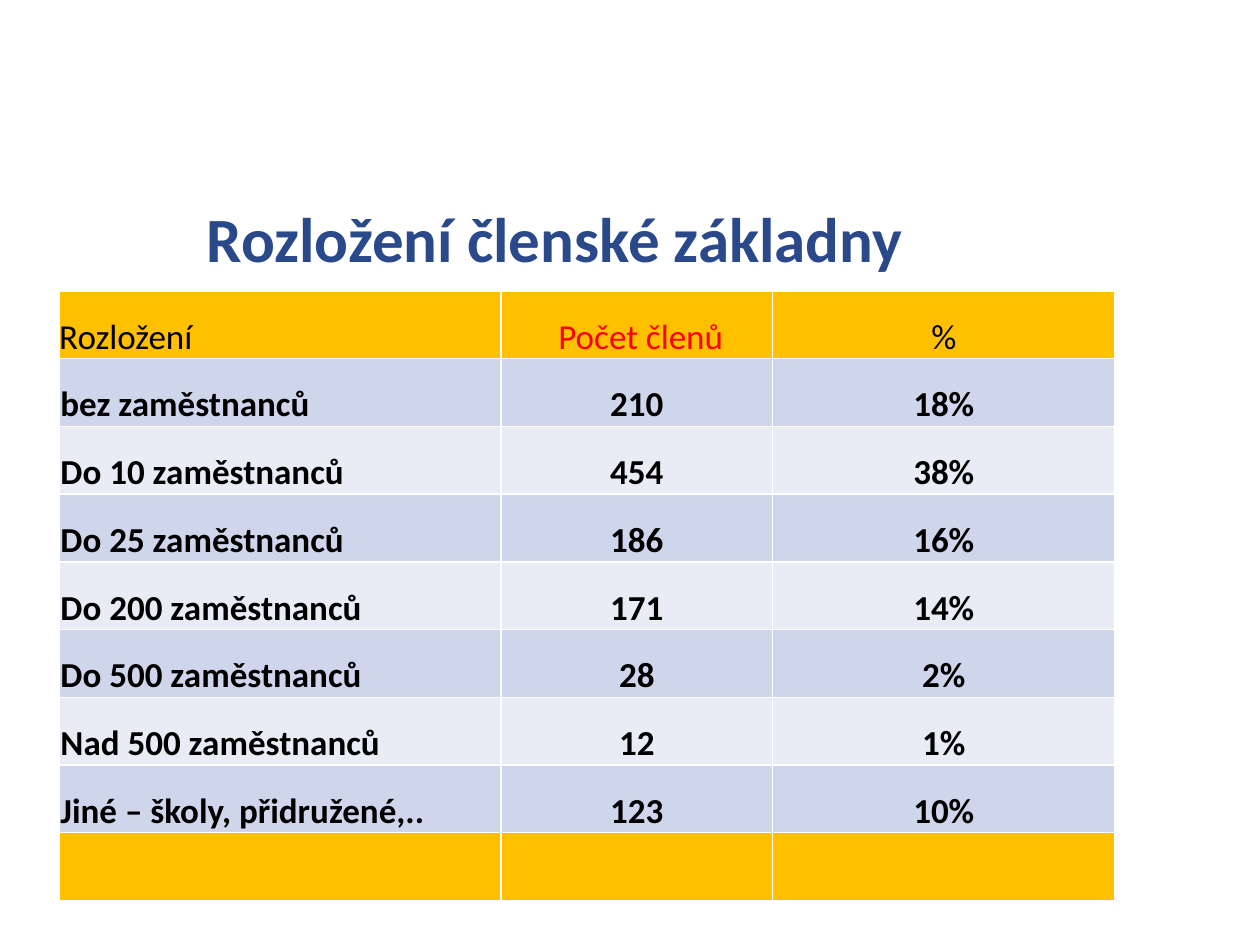
import pptx
import pptx.util
import pptx.dml.color
import pptx.enum.text
import pptx.oxml
import pptx.oxml.ns
from dataclasses import dataclass

Inches = pptx.util.Inches
Align = pptx.enum.text.PP_ALIGN
Anchor = pptx.enum.text.MSO_ANCHOR


@dataclass(frozen=True)
class Theme:
    font: str = "Calibri"
    title: str = "2A498B"
    text: str = "000000"
    hot: str = "FF0000"
    gold: str = "FFC000"
    bands: tuple = ("CFD5EA", "E9EBF5")
    rule: str = "FFFFFF"
    large: int = 36
    body: int = 20
    line: int = 1


THEME = Theme()
COLS = (3.51, 2.16, 2.72)
ROWS = (
    ("Rozložení", " Počet členů", "%"),
    ("bez zaměstnanců", "210", "18%"),
    ("Do 10 zaměstnanců", "454", "38%"),
    ("Do 25 zaměstnanců", "186", "16%"),
    ("Do 200 zaměstnanců", "171", "14%"),
    ("Do 500 zaměstnanců", "28", "2%"),
    ("Nad 500 zaměstnanců", "12", "1%"),
    ("Jiné – školy, přidružené,..", "123", "10%"),
    ("", "", ""),
)


def write(frame, text, size, tint, bold, align):
    frame.text = text
    para = frame.paragraphs[0]
    para.alignment = align
    for run in para.runs:
        run.font.name = THEME.font
        run.font.size = pptx.util.Pt(size)
        run.font.bold = bold
        run.font.color.rgb = pptx.dml.color.RGBColor.from_string(tint)


def edge(cell):
    props = cell._tc.get_or_add_tcPr()
    width = pptx.util.Pt(THEME.line)
    for side in "LRTB":
        props.append(pptx.oxml.parse_xml(
            f'<a:ln{side} {pptx.oxml.ns.nsdecls("a")} w="{width}"><a:solidFill>'
            f'<a:srgbClr val="{THEME.rule}"/></a:solidFill></a:ln{side}>'))


def style(cell, fill, inset):
    edge(cell)
    cell.fill.solid()
    cell.fill.fore_color.rgb = pptx.dml.color.RGBColor.from_string(fill)
    cell.vertical_anchor = Anchor.BOTTOM
    cell.margin_left = cell.margin_right = cell.margin_top = Inches(inset)
    cell.margin_bottom = 0


def head(slide, box):
    title = slide.shapes.title
    title.left, title.top, title.width, title.height = map(Inches, box)
    frame = title.text_frame
    write(frame, "Rozložení členské základny ", THEME.large, THEME.title,
          True, Align.CENTER)
    frame.word_wrap = True
    frame.auto_size = pptx.enum.text.MSO_AUTO_SIZE.NONE
    frame.vertical_anchor = Anchor.MIDDLE
    frame.paragraphs[0].line_spacing = 0.9


def grid(slide, box):
    left, top, width, height = box
    table = slide.shapes.add_table(len(ROWS), len(COLS),
                                   *map(Inches, box)).table
    for col, part in zip(table.columns, COLS):
        col.width = Inches(width * part / sum(COLS))
    for row in table.rows:
        row.height = Inches(height / len(ROWS))
    last = len(ROWS) - 1
    for r, row in enumerate(ROWS):
        plain = r in (0, last)
        fill = THEME.gold if plain else THEME.bands[(r - 1) % 2]
        for c, text in enumerate(row):
            cell = table.cell(r, c)
            style(cell, fill, 0 if plain else 0.01)
            tint = THEME.hot if (r, c) == (0, 1) else THEME.text
            write(cell.text_frame, text, THEME.body, tint, not plain,
                  Align.CENTER if c else Align.LEFT)


def main():
    deck = pptx.Presentation()
    deck.slide_width, deck.slide_height = Inches(10), Inches(7.5)
    slide = deck.slides.add_slide(deck.slide_layouts[5])
    head(slide, (0.15, 1.73, 8.62, 0.38))
    grid(slide, (0.47, 2.31, 8.38, 4.84))
    deck.save("out.pptx")


if __name__ == "__main__":
    main()
